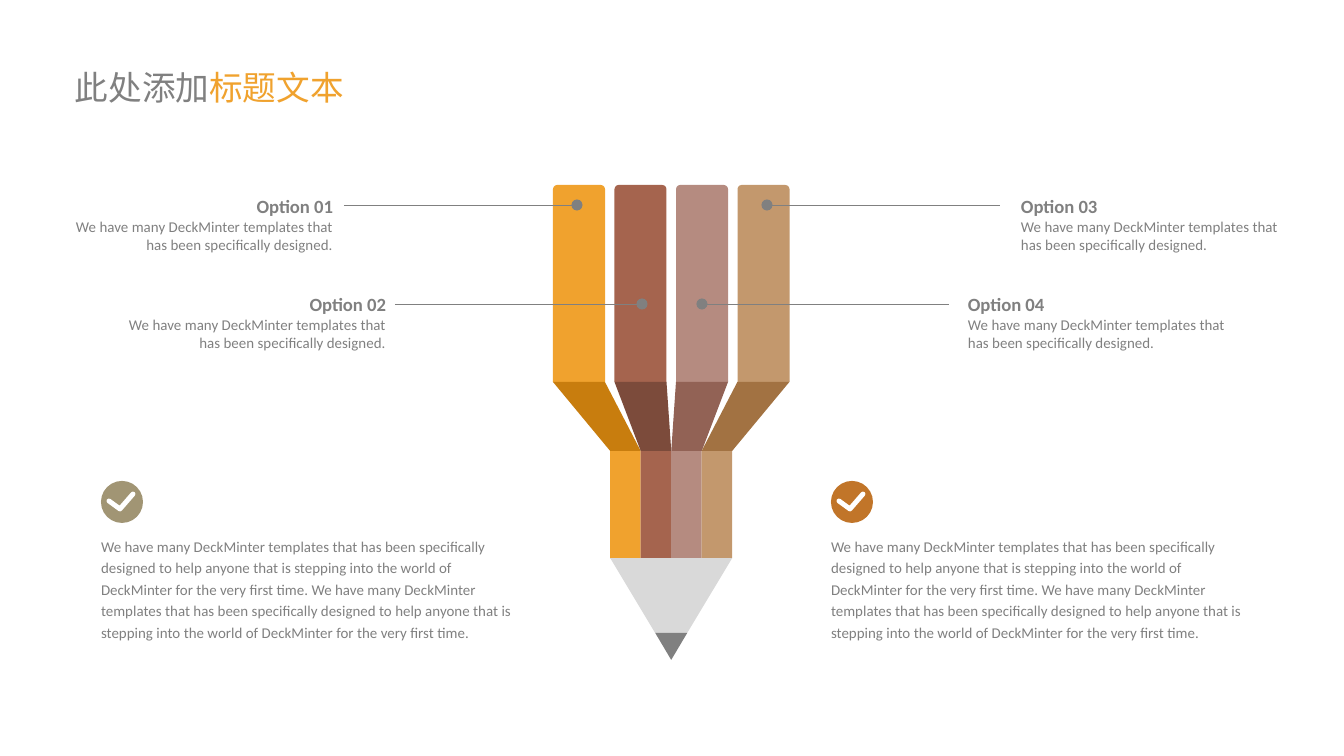
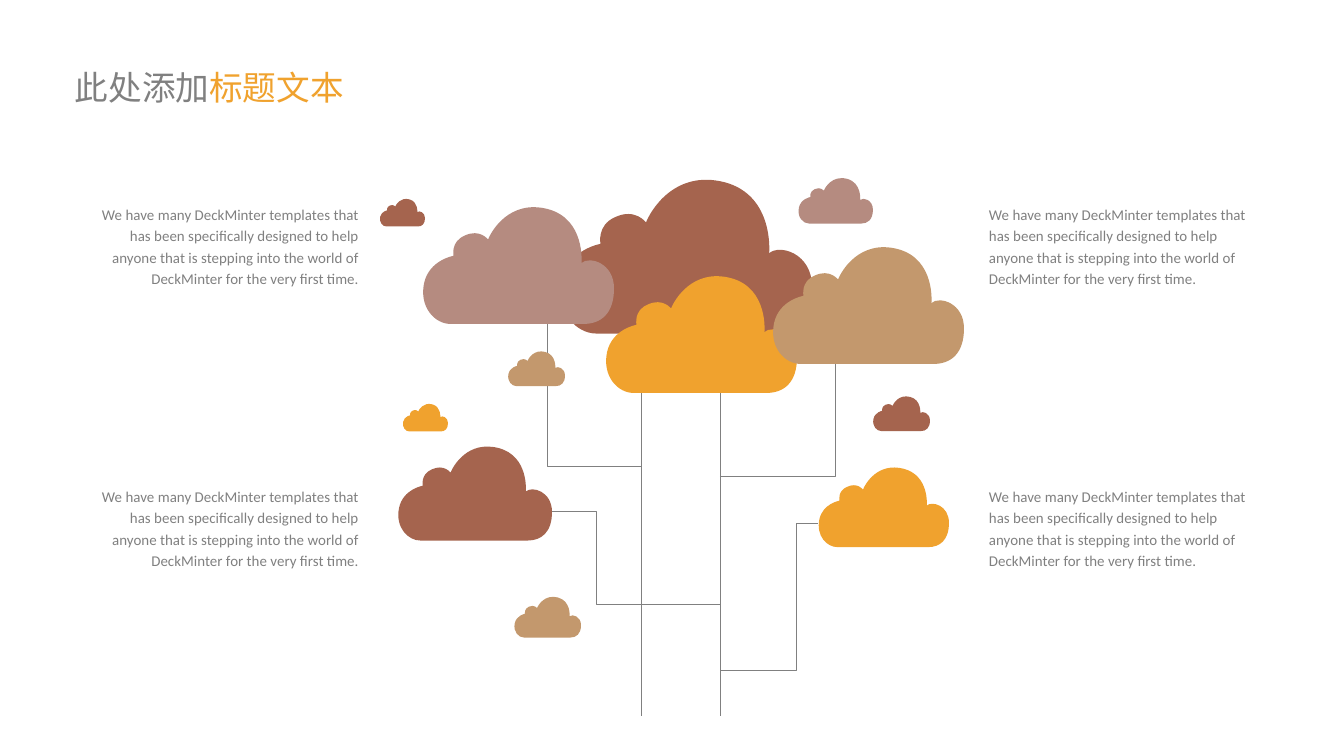
from lxml.etree import SubElement
from pptx import Presentation
from pptx.dml.color import RGBColor
from pptx.enum.shapes import MSO_CONNECTOR, MSO_SHAPE
from pptx.enum.text import MSO_ANCHOR, PP_ALIGN
from pptx.oxml.ns import qn
from pptx.util import Pt

SCALE = 914400 / 134.4
WIDE, HIGH = 1344, 756

GRAY, GOLD, RUST, ROSE, TAN = "808080", "F0A22E", "A5644E", "B58B80", "C3986D"
WHITE, WOOD, OLIVE, AMBER = "FFFFFF", "D9D9D9", "A19574", "C17529"
BARS = [GOLD, RUST, ROSE, TAN]
FOLDS = ["C87D0E", "7C4B3B", "926255", "A27242"]

BRIEF = "We have many DeckMinter templates that has been specifically designed."
STORY = (
    "We have many DeckMinter templates that has been specifically designed to help "
    "anyone that is stepping into the world of DeckMinter for the very first time."
)

# Cloud outline on a 192-unit-wide grid: a start, then three points per curve.
CLOUD_WIDE = 192
CLOUD = [
    (31, 123),
    (51, 123), (145, 123), (162, 123),
    (179, 123), (192, 113), (192, 88),
    (192, 63), (168, 56), (160, 63),
    (160, 63), (164, 20), (127, 10),
    (89, 0), (71, 32), (68, 40),
    (68, 40), (60, 29), (45, 36),
    (31, 42), (34, 56), (34, 56),
    (34, 56), (10, 60), (5, 83),
    (0, 107), (16, 123), (31, 123),
]


def px(value):
    return round(value * SCALE)


def tint(code):
    return RGBColor.from_string(code)


def paint(shape, fill=None, line=None, width=0.5):
    """Set fill and line; None means none."""
    shape.shadow.inherit = False
    if fill:
        shape.fill.solid()
        shape.fill.fore_color.rgb = tint(fill)
    else:
        shape.fill.background()
    if line:
        shape.line.color.rgb = tint(line)
        shape.line.width = Pt(width)
    else:
        shape.line.fill.background()
    return shape


def block(slide, kind, box, fill):
    return paint(slide.shapes.add_shape(kind, *map(px, box)), fill)


def trace(slide, points, close=True, **look):
    """Draw an outline or open path through px points."""
    spots = [(px(x), px(y)) for x, y in points]
    pen = slide.shapes.build_freeform(*spots[0], scale=1.0)
    pen.add_line_segments(spots[1:], close=close)
    return paint(pen.convert_to_shape(), **look)


def bend(shape):
    """Turn every three line segments of a freeform into one cubic curve."""
    track = shape._element.find(".//" + qn("a:path"))
    lines = track.findall(qn("a:lnTo"))
    for first, *rest in zip(lines[::3], lines[1::3], lines[2::3]):
        first.tag = qn("a:cubicBezTo")
        for line in rest:
            first.append(line[0])
            track.remove(line)


def link(slide, start, end, dot=False):
    """Draw a thin straight line, with an oval end if dot."""
    line = slide.shapes.add_connector(
        MSO_CONNECTOR.STRAIGHT, *map(px, (*start, *end))
    )
    line.line.color.rgb = tint(GRAY)
    line.line.width = Pt(0.5)
    if dot:
        SubElement(line.line._get_or_add_ln(), qn("a:tailEnd"), type="oval")
    SubElement(line._element.spPr, qn("a:effectLst"))


def write(para, text, size=8, color=GRAY, bold=False, font="Calibri",
          align=PP_ALIGN.LEFT, lead=1.0):
    """Add a formatted run to a paragraph."""
    para.alignment = align
    para.line_spacing = lead
    run = para.add_run()
    run.text = text
    run.font.size = Pt(size)
    run.font.bold = bold
    run.font.name = font
    run.font.color.rgb = tint(color)
    SubElement(run.font._element, qn("a:ea"), typeface=font)


def place(shape, box):
    """Move a text shape, drop its margins and return its frame."""
    shape.left, shape.top, shape.width, shape.height = map(px, box)
    frame = shape.text_frame
    frame.margin_left = frame.margin_right = 0
    frame.margin_top = frame.margin_bottom = 0
    frame.vertical_anchor = MSO_ANCHOR.TOP
    frame.word_wrap = True
    return frame


def area(slide, box):
    return place(slide.shapes.add_textbox(0, 0, 0, 0), box)


def start(deck):
    """Add a slide with the shared two-colour title."""
    slide = deck.slides.add_slide(deck.slide_layouts[5])
    para = place(slide.shapes.title, (75, 67, 317, 40)).paragraphs[0]
    for text, color in (("此处添加", GRAY), ("标题文本", GOLD)):
        write(para, text, size=18, color=color, font="Noto Sans CJK SC")
    return slide


def pencil(slide, left, top):
    """Draw four bars that fold into one pencil."""
    def draw(points, fill):
        trace(slide, [(left + x, top + y) for x, y in points], fill=fill)

    bar, lane, step = 52, 61.5, 30.5
    fold, neck, wood, lead, tip = 197, 266, 373, 448, 475
    mid = (3 * lane + bar) / 2
    edge = mid - 2 * step
    for i, (color, dark) in enumerate(zip(BARS, FOLDS)):
        x, low = i * lane, edge + i * step
        top_bar = block(slide, MSO_SHAPE.ROUND_2_SAME_RECTANGLE,
                        (left + x, top, bar, fold), color)
        top_bar.adjustments[0] = 0.08
        draw([(low, neck), (low + step, neck), (low + step, wood),
              (low + step / 2, wood + 15), (low, wood)], color)
        draw([(x, fold), (x + bar, fold), (low + step, neck), (low, neck)], dark)
    draw([(edge, wood), (mid + 2 * step, wood), (mid + 16, lead),
          (mid - 16, lead)], WOOD)
    draw([(mid - 16, lead), (mid + 16, lead), (mid, tip)], GRAY)


def option(slide, name, left, top, align):
    frame = area(slide, (left, top, 265, 58))
    write(frame.paragraphs[0], name, size=10, bold=True, align=align)
    write(frame.add_paragraph(), BRIEF, align=align)


def check(slide, left, top, color):
    """Draw a ticked disc above a paragraph."""
    block(slide, MSO_SHAPE.OVAL, (left, top, 42, 42), color)
    tick = [(left + x, top + y) for x, y in ((8, 20), (19, 28), (32, 13))]
    mark = trace(slide, tick, close=False, line=WHITE, width=2.63)
    mark.line._get_or_add_ln().set("cap", "rnd")
    frame = area(slide, (left, top + 53, 413, 109))
    write(frame.paragraphs[0], f"{STORY} {STORY}", lead=1.2)


def pencil_slide(deck):
    slide = start(deck)
    pencil(slide, 553, 185)
    check(slide, 101, 481, OLIVE)
    check(slide, 831, 481, AMBER)
    option(slide, "Option 01", 68, 195, PP_ALIGN.RIGHT)
    option(slide, "Option 02", 121, 293, PP_ALIGN.RIGHT)
    option(slide, "Option 03", 1021, 195, PP_ALIGN.LEFT)
    option(slide, "Option 04", 968, 293, PP_ALIGN.LEFT)
    for y, far, near in ((205, 344, 577), (304, 395, 642)):
        link(slide, (far, y), (near, y), dot=True)
        link(slide, (WIDE - far, y), (WIDE - near, y), dot=True)


def cloud(slide, left, top, wide, color):
    unit = wide / CLOUD_WIDE
    points = [(left + x * unit, top + y * unit) for x, y in CLOUD]
    bend(trace(slide, points, fill=color))


def trunk(slide):
    """Draw the two stems and their branches."""
    west, east = 641, 720
    for x in (west, east):
        link(slide, (x, 386), (x, 716))
    for points in (
        [(548, 308), (548, 467), (west, 467)],
        [(east, 477), (836, 477), (836, 364)],
        [(818, 524), (797, 524), (797, 671), (east, 671)],
        [(east, 604), (597, 604), (597, 512), (552, 512)],
    ):
        trace(slide, points, close=False, line=GRAY)


def tree_slide(deck):
    slide = start(deck)
    trunk(slide)
    for left, wide, align in ((989, 265, PP_ALIGN.LEFT),
                              (90, 269, PP_ALIGN.RIGHT)):
        for top in (202, 484):
            frame = area(slide, (left, top, wide, 87))
            write(frame.paragraphs[0], STORY, align=align, lead=1.2)
    for spot in (
        (555, 169, 257, RUST),
        (419, 199, 195, ROSE),
        (797, 175, 76, ROSE),
        (379, 197, 46, RUST),
        (402, 402, 46, GOLD),
        (872, 394, 58, RUST),
        (395, 440, 157, RUST),
        (816, 462, 133, GOLD),
        (513, 594, 68, TAN),
        (507, 349, 58, TAN),
        (602, 268, 195, GOLD),
        (769, 239, 195, TAN),
    ):
        cloud(slide, *spot)


def main():
    deck = Presentation()
    deck.slide_width, deck.slide_height = px(WIDE), px(HIGH)
    pencil_slide(deck)
    tree_slide(deck)
    deck.save("out.pptx")


if __name__ == "__main__":
    main()
